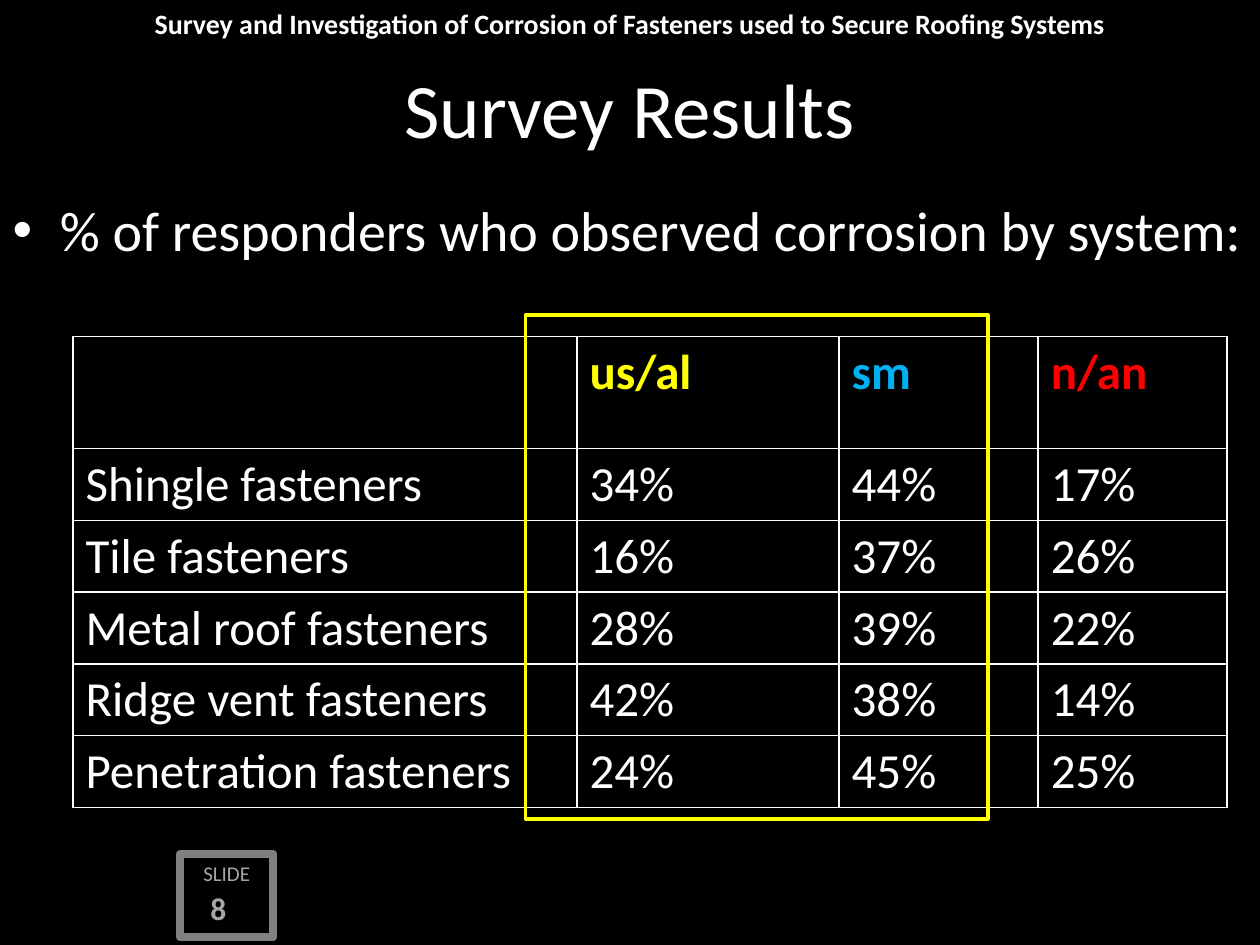
from pptx import Presentation, util as u
from pptx.dml.color import RGBColor
from pptx.enum import shapes, text

BLACK = RGBColor(0x00, 0x00, 0x00)
WHITE = RGBColor(0xFF, 0xFF, 0xFF)
GRAY = RGBColor(0x80, 0x80, 0x80)
SILVER = RGBColor(0xA6, 0xA6, 0xA6)
YELLOW = RGBColor(0xFF, 0xFF, 0x00)
BLUE = RGBColor(0x00, 0xB0, 0xF0)
RED = RGBColor(0xFF, 0x00, 0x00)

FONT = "Calibri"
WIDTH, HEIGHT = 10, 7.5
COLUMN_WIDTHS = [4, 2.08, 1.58, 1.5]
HEADER_HEIGHT, SYSTEM_HEIGHT = 0.89, 0.57

RESPONSES = [("us/al", YELLOW), ("sm", BLUE), ("n/an", RED)]
SYSTEMS = [
    ("Shingle fasteners", "34%", "44%", "17%"),
    ("Tile fasteners", "16%", "37%", "26%"),
    ("Metal roof fasteners", "28%", "39%", "22%"),
    ("Ridge vent fasteners", "42%", "38%", "14%"),
    ("Penetration fasteners", "24%", "45%", "25%"),
]


def inches(*lengths):
    return [u.Inches(length) for length in lengths]


def add_run(paragraph, words, size, color=WHITE, bold=False):
    run = paragraph.add_run()
    run.text = words
    run.font.name = FONT
    run.font.size = u.Pt(size)
    run.font.bold = bold
    run.font.color.rgb = color


def fill_placeholder(placeholder, box, words, size):
    placeholder.left, placeholder.top, placeholder.width, placeholder.height = inches(*box)
    add_run(placeholder.text_frame.paragraphs[0], words, size)


def add_label(slide, box):
    label = slide.shapes.add_textbox(*inches(*box))
    label.text_frame.word_wrap = True
    paragraph = label.text_frame.paragraphs[0]
    paragraph.alignment = text.PP_ALIGN.CENTER
    return paragraph


def add_frame(slide, box, line_color, line_width, fill_color=None):
    frame = slide.shapes.add_shape(shapes.MSO_SHAPE.RECTANGLE, *inches(*box))
    frame.shadow.inherit = False
    if fill_color is None:
        frame.fill.background()
    else:
        frame.fill.solid()
        frame.fill.fore_color.rgb = fill_color
    frame.line.color.rgb = line_color
    frame.line.width = u.Pt(line_width)
    return frame


def add_slide_number(slide):
    badge = add_frame(slide, (1.43, 6.78, 0.74, 0.66), GRAY, 4.5, BLACK)
    badge.text_frame.vertical_anchor = text.MSO_ANCHOR.TOP
    caption = badge.text_frame.paragraphs[0]
    caption.alignment = text.PP_ALIGN.CENTER
    add_run(caption, "SLIDE", 12, SILVER)
    number = add_label(slide, (1.42, 6.98, 0.69, 0.43))
    add_run(number, "8", 18, SILVER, True)
    add_run(number, " ", 20, SILVER, True)


def add_results(slide):
    height = HEADER_HEIGHT + SYSTEM_HEIGHT * len(SYSTEMS)
    results = slide.shapes.add_table(
        len(SYSTEMS) + 1, len(COLUMN_WIDTHS),
        *inches(0.58, 2.67, sum(COLUMN_WIDTHS), height)).table
    results.first_row = results.horz_banding = False
    for column, width in zip(results.columns, COLUMN_WIDTHS):
        column.width = u.Inches(width)
    for row in results.rows:
        row.height = u.Inches(SYSTEM_HEIGHT)
    results.rows[0].height = u.Inches(HEADER_HEIGHT)
    for cell in results.iter_cells():
        cell.fill.solid()
        cell.fill.fore_color.rgb = BLACK
    for column, (response, color) in enumerate(RESPONSES, 1):
        heading = results.cell(0, column).text_frame.paragraphs[0]
        add_run(heading, response, 28, color, True)
    for row, system in enumerate(SYSTEMS, 1):
        for column, entry in enumerate(system):
            add_run(results.cell(row, column).text_frame.paragraphs[0], entry, 28)


def main():
    deck = Presentation()
    deck.slide_width, deck.slide_height = inches(WIDTH, HEIGHT)
    slide = deck.slides.add_slide(deck.slide_layouts[1])
    slide.background.fill.solid()
    slide.background.fill.fore_color.rgb = BLACK

    add_slide_number(slide)
    study = add_label(slide, (0, 0, WIDTH, 0.04 * HEIGHT))
    add_run(study, "Survey and Investigation of Corrosion of Fasteners "
            "used to Secure Roofing Systems", 16, bold=True)
    fill_placeholder(slide.shapes.title, (0, 0.33, WIDTH, 0.14 * HEIGHT),
                     "Survey Results", 44)
    question = slide.placeholders[1]
    fill_placeholder(question, (0, 0.2 * HEIGHT, WIDTH, 5.08),
                     "% of responders who observed corrosion by system:", 32)
    question.text_frame.paragraphs[0].space_before = u.Pt(0)
    add_results(slide)
    add_frame(slide, (4.17, 2.5, 3.67, 4), YELLOW, 2)
    deck.save("out.pptx")


if __name__ == "__main__":
    main()
